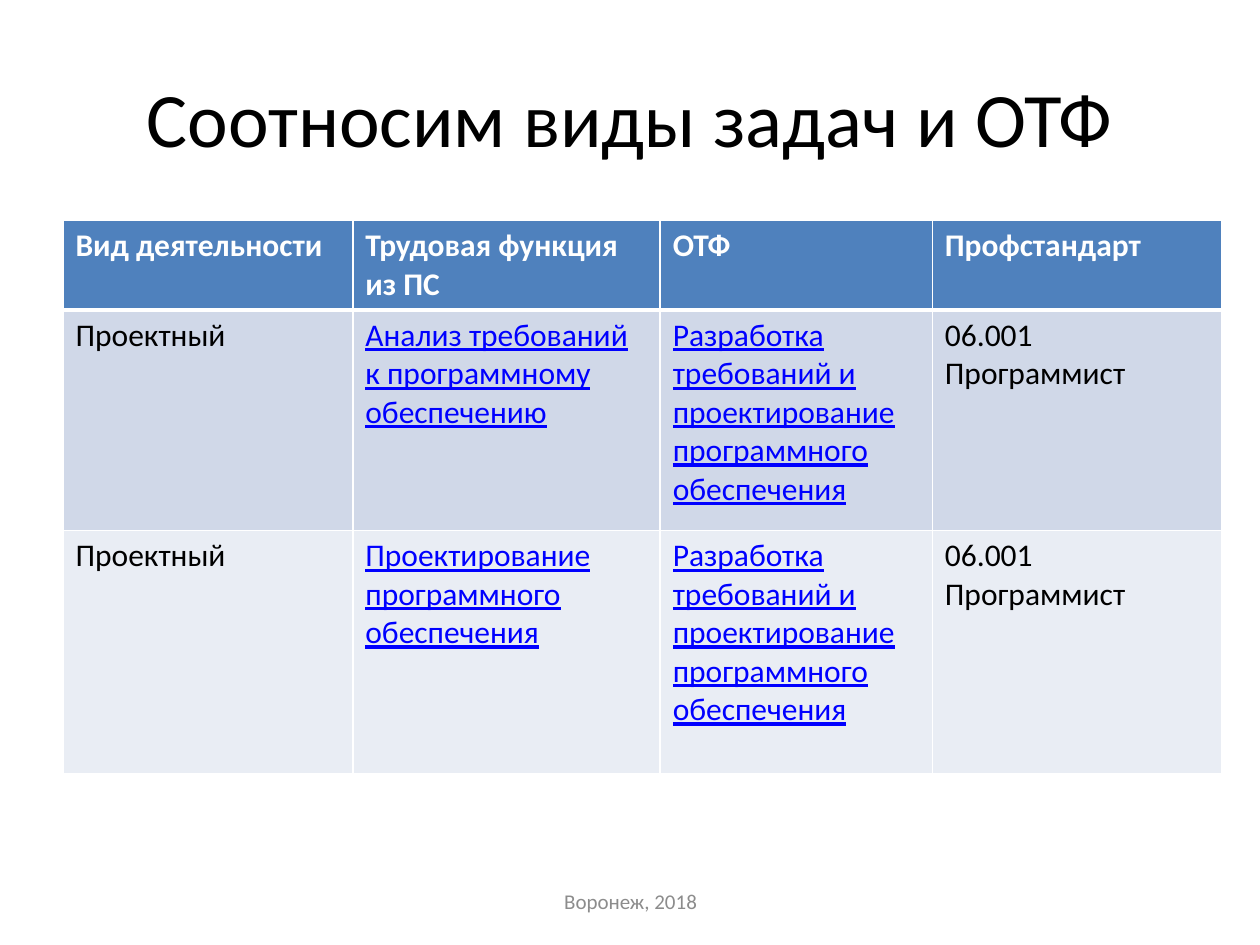
from lxml import etree
from pptx import Presentation
from pptx.dml.color import RGBColor
from pptx.enum import text
from pptx.oxml import ns
from pptx.util import Inches, Pt

FONT = "Calibri"
BLACK = RGBColor(0x00, 0x00, 0x00)
WHITE = RGBColor(0xFF, 0xFF, 0xFF)
GREY = RGBColor(0x8C, 0x8C, 0x8C)
LINK_BLUE = RGBColor(0x00, 0x00, 0xFF)
HEADER_BLUE = RGBColor(0x4F, 0x81, 0xBD)
BANDS = [RGBColor(0xD0, 0xD8, 0xE8), RGBColor(0xE9, 0xED, 0xF4)]

TITLE = "Соотносим виды задач и ОТФ"
FOOTER = "Воронеж, 2018"
GENERAL_FUNCTION = "Разработка требований и проектирование программного обеспечения"
ROWS = [
    ["Вид деятельности", "Трудовая функция из ПС", "ОТФ", "Профстандарт"],
    ["Проектный", "Анализ требований к программному обеспечению",
     GENERAL_FUNCTION, "06.001 Программист"],
    ["Проектный", "Проектирование программного обеспечения",
     GENERAL_FUNCTION, "06.001 Программист"],
]
COLUMN_WIDTHS = [2.3, 2.44, 2.16, 2.3]
ROW_HEIGHTS = [0.7, 1.75, 1.93]
LINK_COLUMNS = (1, 2)


def write(frame, content, size, color, align=text.PP_ALIGN.LEFT):
    frame.text = content
    frame.word_wrap = True
    para = frame.paragraphs[0]
    para.alignment = align
    font = para.runs[0].font
    font.name, font.size, font.color.rgb = FONT, Pt(size), color
    return font


def add_borders(cell, widths):
    """Draw white cell borders; widths maps a side (L, R, T, B) to points."""
    properties = cell._tc.get_or_add_tcPr()
    for side, width in widths.items():
        line = etree.SubElement(properties, ns.qn(f"a:ln{side}"), w=str(Pt(width)))
        fill = etree.SubElement(line, ns.qn("a:solidFill"))
        etree.SubElement(fill, ns.qn("a:srgbClr"), val=str(WHITE))


def add_task_table(page):
    table = page.shapes.add_table(
        len(ROWS), len(COLUMN_WIDTHS), Inches(0.5), Inches(1.75),
        Inches(sum(COLUMN_WIDTHS)), Inches(sum(ROW_HEIGHTS))).table
    for column, width in zip(table.columns, COLUMN_WIDTHS):
        column.width = Inches(width)
    for row, height in zip(table.rows, ROW_HEIGHTS):
        row.height = Inches(height)

    for r, row in enumerate(ROWS):
        for c, content in enumerate(row):
            cell = table.cell(r, c)
            is_header = r == 0
            is_link = not is_header and c in LINK_COLUMNS
            color = WHITE if is_header else LINK_BLUE if is_link else BLACK
            font = write(cell.text_frame, content, 18, color)
            font.bold = is_header
            font.underline = is_link
            add_borders(cell, {"L": 1, "R": 1, "T": 3 if r == 1 else 1,
                               "B": 3 if is_header else 1})
            cell.fill.solid()
            cell.fill.fore_color.rgb = HEADER_BLUE if is_header else BANDS[(r - 1) % 2]


def main():
    deck = Presentation()
    deck.slide_width, deck.slide_height = Inches(10), Inches(7.5)
    page = deck.slides.add_slide(deck.slide_layouts[5])

    title = page.shapes.title
    title.left, title.top = Inches(0.5), Inches(0.3)
    title.width, title.height = Inches(9), Inches(1.25)
    write(title.text_frame, TITLE, 44, BLACK, text.PP_ALIGN.CENTER)
    title.text_frame.vertical_anchor = text.MSO_ANCHOR.MIDDLE

    add_task_table(page)

    footer = page.shapes.add_textbox(
        Inches(3.42), Inches(6.95), Inches(3.17), Inches(0.4))
    write(footer.text_frame, FOOTER, 12, GREY, text.PP_ALIGN.CENTER)
    footer.text_frame.vertical_anchor = text.MSO_ANCHOR.MIDDLE

    deck.save("out.pptx")


if __name__ == "__main__":
    main()
